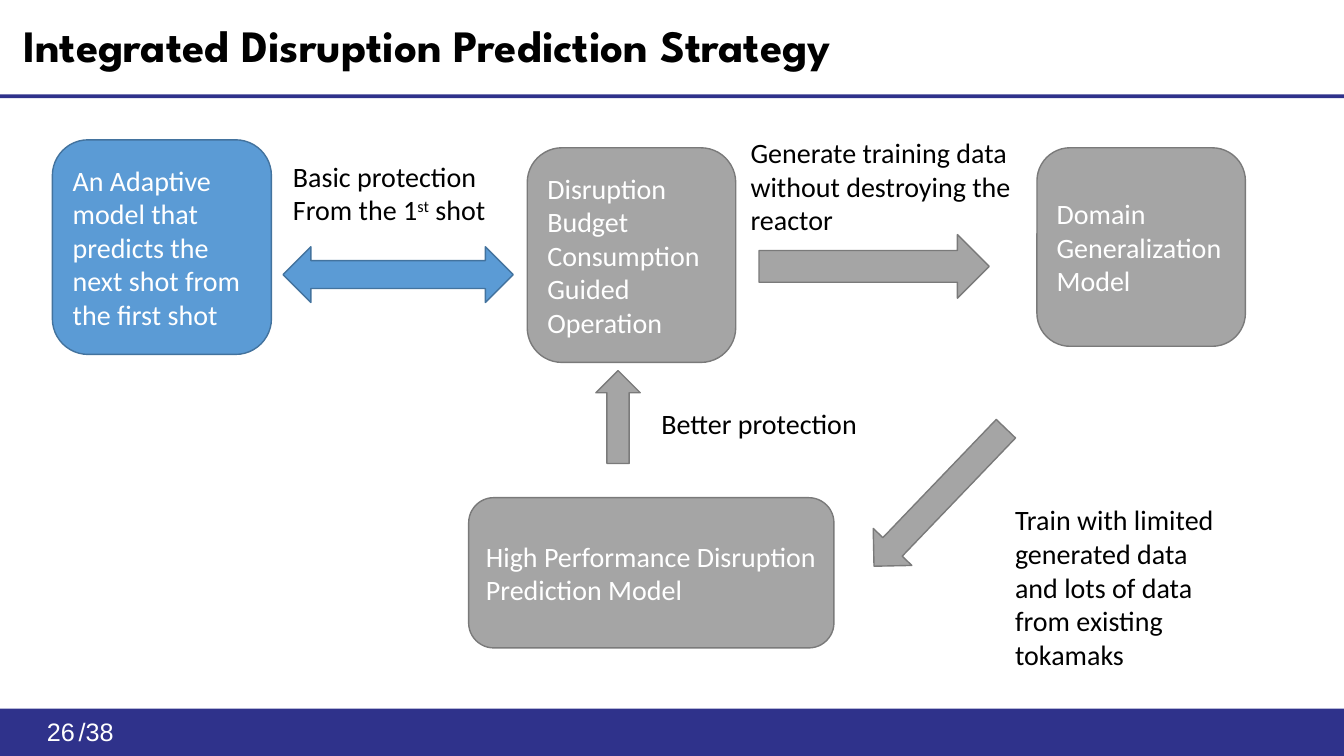
from pptx import Presentation
from pptx.dml.color import RGBColor
from pptx.enum.shapes import MSO_SHAPE
from pptx.enum.text import MSO_ANCHOR, MSO_AUTO_SIZE, PP_ALIGN
from pptx.util import Pt

NAVY, WHITE, BLACK = "2F328B", "FFFFFF", "000000"
BLUE = ("5B9BD5", "43739E")
GREY = ("A5A5A5", "7A7A7A")


def paint(target, color):
    target.solid()
    target.fore_color.rgb = RGBColor.from_string(color)


def place(shape, box):
    shape.left, shape.top, shape.width, shape.height = map(Pt, box)


def add_words(paragraph, words, color, size=20, font="Calibri", bold=False):
    run = paragraph.add_run()
    run.text = words
    run.font.name = font
    run.font.size = Pt(size)
    run.font.bold = bold
    paint(run.font.fill, color)
    return run


def write_lines(frame, lines, color, align=PP_ALIGN.LEFT, **style):
    for index, line in enumerate(lines):
        paragraph = frame.paragraphs[0] if index == 0 else frame.add_paragraph()
        paragraph.alignment = align
        add_words(paragraph, line, color, **style)


def add_title(slide, words):
    title = slide.shapes.title
    place(title, (9.4, 2.9, 657.4, 62.6))
    frame = title.text_frame
    frame.auto_size = MSO_AUTO_SIZE.NONE
    frame.vertical_anchor = MSO_ANCHOR.MIDDLE
    write_lines(frame, [words], BLACK, size=32, font="League Spartan", bold=True)
    frame.paragraphs[0].line_spacing = 0.9


def add_figure(slide, preset, box, fill, outline=None, rotation=0):
    figure = slide.shapes.add_shape(preset, *map(Pt, box))
    figure.shadow.inherit = False
    figure.rotation = rotation
    paint(figure.fill, fill)
    if outline:
        paint(figure.line.fill, outline)
        figure.line.width = Pt(1)
    else:
        figure.line.fill.background()
    return figure


def add_stage(slide, box, colors, lines):
    stage = add_figure(slide, MSO_SHAPE.ROUNDED_RECTANGLE, box, *colors)
    stage.text_frame.word_wrap = True
    stage.text_frame.vertical_anchor = MSO_ANCHOR.MIDDLE
    write_lines(stage.text_frame, lines, WHITE)


def add_label(slide, box, lines, color=BLACK, wrap=True, **style):
    frame = slide.shapes.add_textbox(*map(Pt, box)).text_frame
    frame.word_wrap = wrap
    write_lines(frame, lines, color, **style)
    return frame


def main():
    deck = Presentation()
    deck.slide_width, deck.slide_height = Pt(960), Pt(540)
    slide = deck.slides.add_slide(deck.slide_layouts[5])

    add_figure(slide, MSO_SHAPE.RECTANGLE, (0, 506.2, 962, 33.8), NAVY)
    add_figure(slide, MSO_SHAPE.RECTANGLE, (0, 67.5, 960, 2.7), NAVY)
    add_title(slide, "Integrated Disruption Prediction Strategy")
    page_style = {"color": WHITE, "size": 18, "font": "Arial"}
    add_label(slide, (3.6, 508.3, 56.9, 29), ["26"], align=PP_ALIGN.RIGHT, **page_style)
    add_label(slide, (49, 508.3, 82, 29), ["/38"], **page_style)

    stages = [
        ((37.4, 99.9, 156.5, 153.3), BLUE,
         ["An Adaptive model that predicts the next shot from the first shot"]),
        ((376.6, 105.6, 148.9, 153.3), GREY,
         ["Disruption Budget Consumption Guided", "Operation"]),
        ((740.7, 105.6, 148.9, 141.8), GREY, ["Domain Generalization", "Model"]),
        ((334.8, 355.5, 260.9, 107.3), GREY,
         ["High Performance Disruption Prediction Model"]),
    ]
    for box, colors, lines in stages:
        add_stage(slide, box, colors, lines)

    arrows = [
        (MSO_SHAPE.LEFT_RIGHT_ARROW, (202.2, 176.3, 164.4, 39.8), BLUE, 0),
        (MSO_SHAPE.RIGHT_ARROW, (542.2, 167.6, 164.4, 45.4), GREY, 0),
        (MSO_SHAPE.DOWN_ARROW, (652.3, 287.3, 38.2, 136.1), GREY, 43.8),
        (MSO_SHAPE.RIGHT_ARROW, (408.3, 282, 66.4, 31.7), GREY, 270),
    ]
    for preset, box, colors, rotation in arrows:
        add_figure(slide, preset, box, *colors, rotation)

    protection = add_label(slide, (202.2, 110.2, 154, 55.4),
                           ["Basic protection", "From the 1"], wrap=False)
    first_shot = protection.paragraphs[1]
    ordinal = add_words(first_shot, "st", BLACK)
    ordinal.font._element.set("baseline", "30000")
    add_words(first_shot, " shot", BLACK)

    add_label(slide, (529, 93.4, 204, 80),
              ["Generate training data without destroying the reactor"])
    add_label(slide, (718, 355.7, 158.4, 128),
              ["Train with limited generated data and lots of data from existing tokamaks"])
    add_label(slide, (465.3, 286.9, 158.4, 31.5), ["Better protection"])

    deck.save("out.pptx")


if __name__ == "__main__":
    main()
